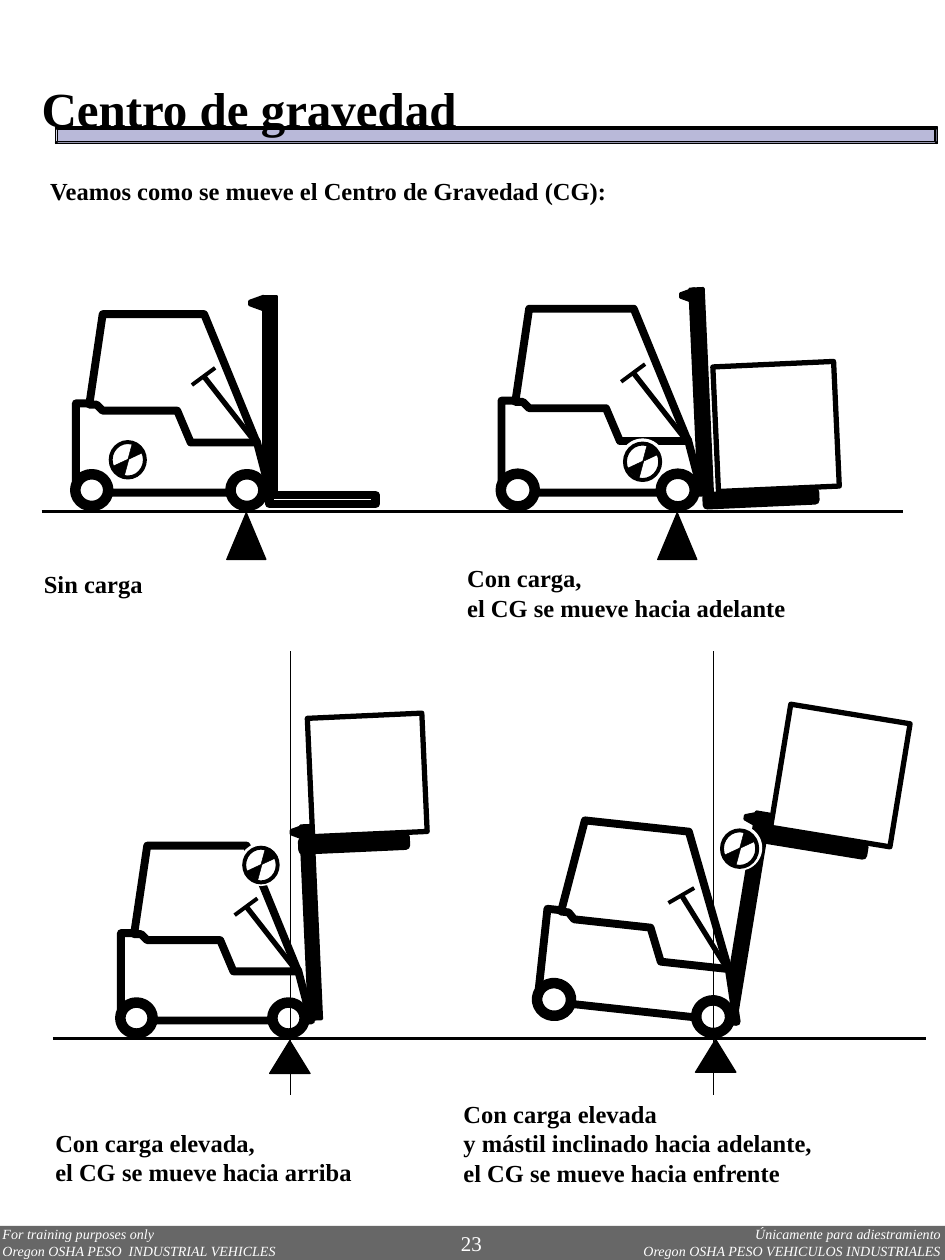
from dataclasses import dataclass
from math import cos, radians, sin
from typing import NamedTuple, Optional

from lxml.etree import SubElement
from pptx import Presentation
from pptx.dml.color import RGBColor
from pptx.enum.shapes import MSO_CONNECTOR, MSO_SHAPE
from pptx.enum.text import MSO_ANCHOR, MSO_AUTO_SIZE, PP_ALIGN
from pptx.oxml.ns import qn
from pptx.util import Inches, Pt

BLACK = RGBColor(0x00, 0x00, 0x00)
WHITE = RGBColor(0xFF, 0xFF, 0xFF)
GRAY = RGBColor(0x67, 0x67, 0x67)
LILAC = RGBColor(0xB9, 0xB9, 0xD9)
FONT = "Times New Roman"


class Point(NamedTuple):
    x: float
    y: float


class Box(NamedTuple):
    left: float
    top: float
    width: float
    height: float


@dataclass
class Forklift:
    wheel: Point  # centre of the front wheel
    scale: float
    mast: Box
    mast_angle: float
    tip: Point
    fork: Box
    gravity: Point  # corner of the gravity mark
    load: Optional[Box] = None
    load_angle: float = 0
    tilt: float = 0
    mast_behind: bool = False


# Truck outlines, measured from the front wheel's centre
CHASSIS = [Point(-1.4, 0.02), Point(-1.4, -0.71), Point(-1.23, -0.71),
           Point(-1.18, -0.66), Point(-0.57, -0.66), Point(-0.46, -0.4),
           Point(0.08, -0.4), Point(0.19, 0.02)]
CAB = [Point(-1.29, -0.7), Point(-1.18, -1.44), Point(-0.35, -1.44),
       Point(0.08, -0.39), Point(-0.46, -0.39), Point(-0.57, -0.65),
       Point(-1.18, -0.65), Point(-1.23, -0.7)]
TIP = [Point(0, 0), Point(-0.11, 0.04), Point(-0.11, 0.07), Point(0, 0.11)]
WHEELS = [Point(-1.27, 0), Point(0, 0)]
COLUMN = (Point(0.07, -0.39), Point(-0.36, -0.94))
STEERING = (Point(-0.45, -0.86), Point(-0.26, -1))

FORKLIFTS = [
    Forklift(Point(5.38, 3.89), 1, Box(5.51, 2.29, 0.11, 1.62), -2.6,
             Point(5.51, 2.29), Box(5.61, 3.92, 0.86, 0.07), Point(4.92, 3.48),
             Box(5.68, 2.89, 0.96, 0.99), -2.6),
    Forklift(Point(5.66, 8.07), 1, Box(5.87, 6.44, 0.11, 1.63), 9.3,
             Point(6.03, 6.45), Box(6, 6.65, 0.86, 0.07), Point(5.69, 6.55),
             Box(6.19, 5.66, 0.96, 0.99), 9.3, 6.2, True),
    Forklift(Point(2.29, 8.08), 0.95, Box(2.42, 6.55, 0.1, 1.54), -2.6,
             Point(2.42, 6.55), Box(2.4, 6.66, 0.82, 0.07), Point(1.9, 6.69),
             Box(2.46, 5.68, 0.91, 0.94), -2.6),
    Forklift(Point(1.96, 3.89), 0.97, Box(2.09, 2.35, 0.11, 1.56), 0,
             Point(2.09, 2.35), Box(2.14, 3.93, 0.84, 0.07), Point(0.84, 3.47)),
]


def place(point: Point, origin: Point, scale: float = 1, angle: float = 0) -> Point:
    turn = radians(angle)
    return Point(origin.x + scale * (point.x * cos(turn) - point.y * sin(turn)),
                 origin.y + scale * (point.x * sin(turn) + point.y * cos(turn)))


def paint(shape, fill: Optional[RGBColor], line: float) -> None:
    shape.shadow.inherit = False
    if fill is None:
        shape.fill.background()
    else:
        shape.fill.solid()
        shape.fill.fore_color.rgb = fill
    if line:
        shape.line.color.rgb = BLACK
        shape.line.width = Pt(line)
    else:
        shape.line.fill.background()


def add_shape(kind, box: Box, fill: Optional[RGBColor] = None,
              line: float = 0, angle: float = 0):
    shape = page.shapes.add_shape(kind, *map(Inches, box))
    paint(shape, fill, line)
    shape.rotation = angle
    return shape


def add_outline(points: list, fill: RGBColor, line: float) -> None:
    corners = [(Inches(point.x), Inches(point.y)) for point in points]
    builder = page.shapes.build_freeform(*corners[0])
    builder.add_line_segments(corners[1:], close=True)
    paint(builder.convert_to_shape(), fill, line)


def add_line(start: Point, end: Point, width: float) -> None:
    line = page.shapes.add_connector(MSO_CONNECTOR.STRAIGHT,
                                     *map(Inches, (*start, *end)))
    line.line.color.rgb = BLACK
    line.line.width = Pt(width)
    SubElement(line.element.spPr, qn("a:effectLst"))


def write(box, text: str, *, size: float = 14, bold: bool = False,
          italic: bool = False, color: RGBColor = BLACK,
          align=PP_ALIGN.LEFT, anchor=MSO_ANCHOR.TOP, inset: bool = True) -> None:
    frame = box.text_frame
    frame.word_wrap = True
    frame.auto_size = MSO_AUTO_SIZE.SHAPE_TO_FIT_TEXT
    frame.vertical_anchor = anchor
    if not inset:
        frame.margin_left = frame.margin_right = 0
        frame.margin_top = frame.margin_bottom = 0
    for index, words in enumerate(text.split("\n")):
        para = frame.add_paragraph() if index else frame.paragraphs[0]
        para.alignment = align
        span = para.add_run()
        span.text = words
        span.font.name, span.font.size = FONT, Pt(size)
        span.font.bold, span.font.italic = bold, italic
        span.font.color.rgb = color


def add_text(box: Box, text: str, **style) -> None:
    write(page.shapes.add_textbox(*map(Inches, box)), text, **style)


def draw_truck(lift: Forklift) -> None:
    def local(points):
        return [place(point, lift.wheel, lift.scale, lift.tilt) for point in points]

    add_outline(local(CHASSIS), WHITE, 4.5)
    add_outline(local(CAB), WHITE, 4.5)
    add_line(*local(COLUMN), 3)
    add_line(*local(STEERING), 2.25)
    width, height = 0.27 * lift.scale, 0.26 * lift.scale
    for center in local(WHEELS):
        add_shape(MSO_SHAPE.OVAL, Box(center.x - width / 2, center.y - height / 2,
                                      width, height), WHITE, 6, lift.tilt)


def draw_mast(lift: Forklift) -> None:
    tip_angle = max(lift.mast_angle, 0)
    add_outline([place(point, lift.tip, angle=tip_angle) for point in TIP], BLACK, 1.5)
    add_shape(MSO_SHAPE.RECTANGLE, lift.mast, BLACK, 1.5, lift.mast_angle)


def draw_load(lift: Forklift) -> None:
    if lift.load:
        add_shape(MSO_SHAPE.RECTANGLE, lift.load, WHITE, 3, lift.load_angle)
    add_shape(MSO_SHAPE.RECTANGLE, lift.fork, None, 5, lift.load_angle)


def draw_gravity_mark(lift: Forklift) -> None:
    def part(kind, left, top, width, height, *style):
        corner = place(Point(left, top), lift.gravity, lift.scale)
        add_shape(kind, Box(*corner, width * lift.scale, height * lift.scale), *style)

    part(MSO_SHAPE.OVAL, 0, 0, 0.36, 0.36, WHITE)
    part(MSO_SHAPE.ISOSCELES_TRIANGLE, 0.16, 0.06, 0.13, 0.14, BLACK, 0.25, 220)
    part(MSO_SHAPE.ISOSCELES_TRIANGLE, 0.08, 0.16, 0.13, 0.14, BLACK, 0.25, 40)
    part(MSO_SHAPE.OVAL, 0.04, 0.04, 0.28, 0.29, None, 2.25)


deck = Presentation()
deck.slide_width, deck.slide_height = Inches(7.5), Inches(10)
page = deck.slides.add_slide(deck.slide_layouts[5])

# Footer
add_shape(MSO_SHAPE.RECTANGLE, Box(0, 9.73, 7.5, 0.27), GRAY)
footer = dict(size=8, italic=True, color=WHITE, inset=False)
add_text(Box(4.07, 9.73, 3.4, 0.27), "Únicamente para adiestramiento\n"
         "Oregon OSHA PESO VEHICULOS INDUSTRIALES", align=PP_ALIGN.RIGHT, **footer)
add_text(Box(0.02, 9.73, 3.34, 0.27), "For training purposes only\n"
         "Oregon OSHA PESO  INDUSTRIAL VEHICLES", **footer)
add_text(Box(3.56, 9.72, 0.54, 0.3), "23", size=12, color=WHITE)

# Title in front of its bar
add_shape(MSO_SHAPE.BEVEL, Box(0.44, 1.01, 7, 0.13), LILAC, 1)
title = page.shapes.title
title.left, title.top, title.width, title.height = map(Inches, (0.23, 0.57, 4.89, 0.57))
write(title, "Centro de gravedad", size=28, bold=True)
page.shapes.element.append(title.element)

# Introduction and captions
add_text(Box(0.3, 1.35, 6.25, 0.33),
         "Veamos como se mueve el Centro de Gravedad (CG):", bold=True)
for box, caption in [
    (Box(0.34, 8.9, 2.99, 0.57), "Con carga elevada,\nel CG se mueve hacia arriba"),
    (Box(3.58, 8.67, 3.73, 0.8), "Con carga elevada\ny mástil inclinado hacia adelante,\n"
                                 "el CG se mueve hacia enfrente"),
    (Box(0.25, 4.47, 1.26, 0.33), "Sin carga"),
    (Box(3.61, 4.42, 3.06, 0.57), "Con carga,\nel CG se mueve hacia adelante"),
]:
    add_text(box, caption, bold=True, anchor=MSO_ANCHOR.MIDDLE)

# Forklifts
for forklift in FORKLIFTS:
    steps = [draw_truck, draw_mast, draw_load]
    if forklift.mast_behind:
        steps.reverse()
    for step in [*steps, draw_gravity_mark]:
        step(forklift)

# Ground lines, fulcrums and plumb lines
add_line(Point(0.33, 4.06), Point(7.17, 4.06), 1.5)
add_line(Point(0.42, 8.24), Point(7.35, 8.24), 1.5)
for fulcrum in [Box(1.8, 4.07, 0.31, 0.37), Box(5.22, 4.07, 0.31, 0.37),
                Box(2.14, 8.26, 0.32, 0.26), Box(5.52, 8.25, 0.32, 0.26)]:
    add_shape(MSO_SHAPE.ISOSCELES_TRIANGLE, fulcrum, BLACK, 0.75)
for x in (2.3, 5.66):
    add_line(Point(x, 5.17), Point(x, 8.69), 0.25)

deck.save("out.pptx")
